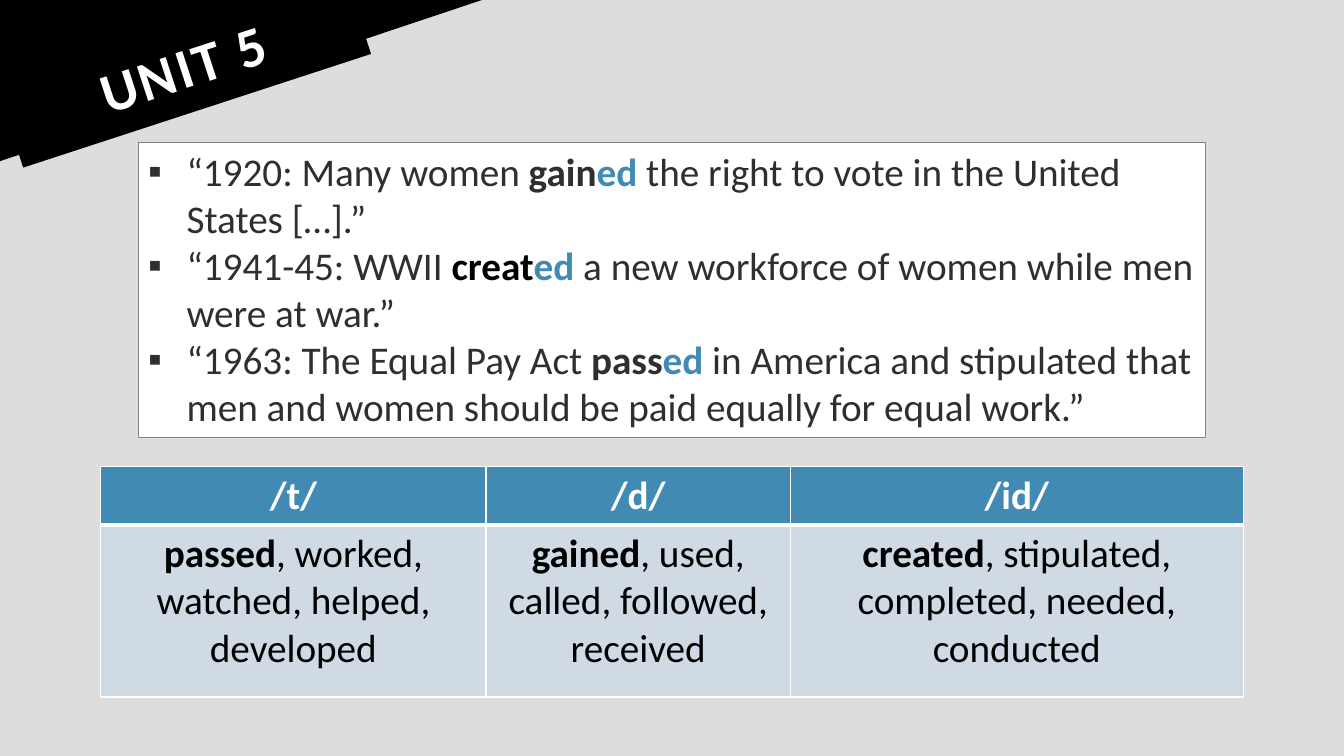
from lxml.etree import SubElement
from pptx import Presentation
from pptx.dml.color import RGBColor
from pptx.enum.shapes import MSO_SHAPE
from pptx.enum.text import MSO_ANCHOR, MSO_AUTO_SIZE, PP_ALIGN
from pptx.oxml.ns import qn
from pptx.util import Pt

PX = 9144  # 100 px to the inch

BACKGROUND = RGBColor(0xDD, 0xDD, 0xDD)
BLACK = RGBColor(0, 0, 0)
WHITE = RGBColor(0xFF, 0xFF, 0xFF)
INK = RGBColor(0x2F, 0x2F, 0x2E)
BLUE = RGBColor(0x41, 0x8A, 0xB3)
PALE_BLUE = RGBColor(0xCF, 0xDA, 0xE5)
OUTLINE = RGBColor(0x83, 0x83, 0x83)

BODY_FONT = {"name": "Calibri", "size": Pt(28)}
TITLE_FONT = {"name": "Calibri", "size": Pt(40)}

# Each run is text, colour, bold
EXAMPLES = [
    [("“1920: Many women ", INK, False), ("gain", INK, True), ("ed ", BLUE, True),
     ("the right to vote in the United States […].”", INK, False)],
    [("“1941-45: WWII ", INK, False), ("creat", BLACK, True), ("ed", BLUE, True),
     (" a new workforce of women while men were at war.”", INK, False)],
    [("“1963: The Equal Pay Act ", INK, False), ("pass", INK, True), ("ed", BLUE, True),
     (" in America and stipulated that men and women should be paid equally"
      " for equal work.”", INK, False)],
]

# Sound, example from the text, further verbs, column width
SOUNDS = [
    ("/t/", "passed", ", worked, watched, helped, developed", 382),
    ("/d/", "gained", ", used, called, followed, received", 302),
    ("/id/", "created", ", stipulated, completed, needed, conducted", 449),
]
ROW_HEIGHTS = (57, 171)


def set_values(target, values):
    for name, value in values.items():
        setattr(target, name, value)


def place(shape, left, top, width, height, rotation=0):
    set_values(shape, {"left": left * PX, "top": top * PX, "width": width * PX,
                       "height": height * PX, "rotation": rotation})


def fill_solid(target, color):
    target.fill.solid()
    target.fill.fore_color.rgb = color


def add_runs(paragraph, runs, font_values):
    for text, color, bold in runs:
        run = paragraph.add_run()
        run.text = text
        set_values(run.font, {**font_values, "bold": bold})
        run.font.color.rgb = color


def set_bullet(paragraph, character, indent):
    properties = paragraph._p.get_or_add_pPr()
    properties.set("marL", str(indent * PX))
    properties.set("indent", str(-indent * PX))
    SubElement(properties, qn("a:buFont"), typeface="Arial")
    SubElement(properties, qn("a:buChar"), char=character)


def set_borders(cell, widths):
    """Draw white cell borders; widths gives points for left, right, top, bottom."""
    properties = cell._tc.get_or_add_tcPr()
    for side, width in zip("LRTB", widths):
        line = SubElement(properties, qn(f"a:ln{side}"), w=str(Pt(width)))
        solid = SubElement(line, qn("a:solidFill"))
        SubElement(solid, qn("a:srgbClr"), val=str(WHITE))


def add_band(slide):
    """Add the slanted corner band behind the placeholders."""
    band = slide.shapes.add_shape(MSO_SHAPE.RECTANGLE, 0, 0, PX, PX)
    place(band, -92, -89, 561, 181, 341.5)
    fill_solid(band, BLACK)
    band.line.fill.background()
    band.shadow.inherit = False
    slide.shapes._spTree.insert(2, band._element)


def fill_title(title, text):
    place(title, 1, 28, 363, 84, 341.9)
    fill_solid(title, BLACK)
    margins = ("margin_left", "margin_top", "margin_right", "margin_bottom")
    set_values(title.text_frame, {
        "auto_size": MSO_AUTO_SIZE.NONE, "vertical_anchor": MSO_ANCHOR.MIDDLE,
        **dict.fromkeys(margins, 20 * PX)})
    paragraph = title.text_frame.paragraphs[0]
    set_values(paragraph, {"alignment": PP_ALIGN.CENTER, "line_spacing": 0.9})
    add_runs(paragraph, [(text, WHITE, True)], TITLE_FONT)
    paragraph.runs[0].font._element.set("spc", "200")


def fill_examples(body):
    place(body, 137, 141, 1059, 293)
    fill_solid(body, WHITE)
    body.line.color.rgb = OUTLINE
    body.line.width = Pt(0.75)
    frame = body.text_frame
    frame.auto_size = MSO_AUTO_SIZE.NONE
    for index, runs in enumerate(EXAMPLES):
        paragraph = frame.add_paragraph() if index else frame.paragraphs[0]
        paragraph.space_before = Pt(0)
        set_bullet(paragraph, "▪", 38)
        add_runs(paragraph, runs, BODY_FONT)


def fill_cell(cell, runs, color, borders):
    set_borders(cell, borders)
    fill_solid(cell, color)
    paragraph = cell.text_frame.paragraphs[0]
    paragraph.alignment = PP_ALIGN.CENTER
    add_runs(paragraph, runs, BODY_FONT)


def add_sound_table(slide):
    width = sum(sound[-1] for sound in SOUNDS)
    frame = slide.shapes.add_table(len(ROW_HEIGHTS), len(SOUNDS), 100 * PX, 463 * PX,
                                   width * PX, sum(ROW_HEIGHTS) * PX)
    table = frame.table
    for row, height in zip(table.rows, ROW_HEIGHTS):
        row.height = height * PX
    for index, (sound, example, verbs, column_width) in enumerate(SOUNDS):
        table.columns[index].width = column_width * PX
        fill_cell(table.cell(0, index), [(sound, WHITE, True)], BLUE, (1, 1, 1, 3))
        fill_cell(table.cell(1, index), [(example, BLACK, True), (verbs, BLACK, False)],
                  PALE_BLUE, (1, 1, 3, 1))


def main():
    presentation = Presentation()
    presentation.slide_width = 1333 * PX
    presentation.slide_height = 750 * PX
    slide = presentation.slides.add_slide(presentation.slide_layouts[1])
    fill_solid(slide.background, BACKGROUND)
    add_band(slide)
    fill_title(slide.shapes.title, "UNIT 5")
    fill_examples(slide.placeholders[1])
    add_sound_table(slide)
    presentation.save("out.pptx")


if __name__ == "__main__":
    main()
